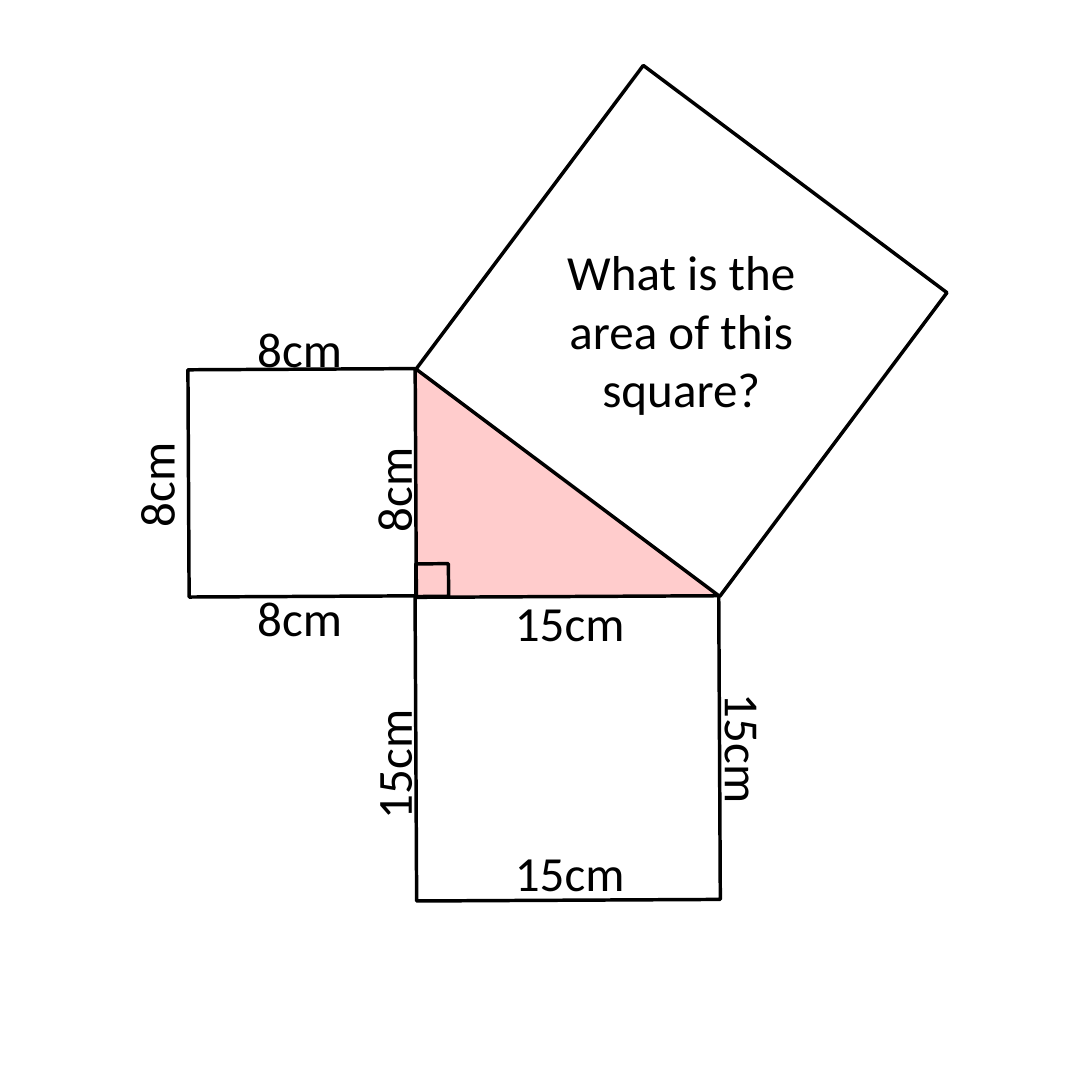
from math import atan2, degrees, hypot

from pptx import Presentation
from pptx.dml.color import RGBColor
from pptx.enum import shapes, text
from pptx.util import Cm, Pt

COLOURS = {"ink": "000000", "triangle": "FFCCCC"}
FONT, TEXT_SIZE = "Calibri", 14
SLIDE_SIDE = 11

# Triangle: right angle at bottom left, lengths in cm on the slide
CORNER_X, CORNER_Y = 4.19, 6.01
UPRIGHT, BASE = 2.29, 3.06
MARK = 0.33
TILT = -0.3

QUESTION = "What is the area of this square?"
QUESTION_SIZE = (3.15, 2.06)

# Side lengths: text, centre x, centre y, rotation
LABELS = [
    ("8cm", 3.02, 3.51, 0),
    ("8cm", 3.02, 6.22, 0),
    ("8cm", 1.57, 4.88, 270),
    ("8cm", 3.96, 4.93, 270),
    ("15cm", 3.96, 7.7, 270),
    ("15cm", 7.49, 7.54, 90),
    ("15cm", 5.74, 8.79, 0),
    ("15cm", 5.74, 6.27, 0),
]
LABEL_WIDTHS = {"8cm": 1.37, "15cm": 1.63}
LABEL_HEIGHT = 0.86


def colour(name):
    return RGBColor.from_string(COLOURS[name])


def box(centre_x, centre_y, width, height):
    return (Cm(centre_x - width / 2), Cm(centre_y - height / 2),
            Cm(width), Cm(height))


def add_square(slide, centre_x, centre_y, side, rotation):
    square = slide.shapes.add_shape(
        shapes.MSO_SHAPE.RECTANGLE, *box(centre_x, centre_y, side, side))
    square.rotation = rotation
    square.shadow.inherit = False
    square.fill.background()
    square.line.color.rgb = colour("ink")
    square.line.width = Pt(1)


def add_words(slide, words, centre_x, centre_y, width, height, rotation, wrap):
    holder = slide.shapes.add_textbox(*box(centre_x, centre_y, width, height))
    holder.rotation = rotation
    frame = holder.text_frame
    frame.word_wrap = wrap
    frame.auto_size = text.MSO_AUTO_SIZE.SHAPE_TO_FIT_TEXT
    frame.text = words
    line = frame.paragraphs[0]
    line.alignment = text.PP_ALIGN.CENTER
    font = line.runs[0].font
    font.name, font.size = FONT, Pt(TEXT_SIZE)
    font.color.rgb = colour("ink")


def main():
    deck = Presentation()
    deck.slide_width = deck.slide_height = Cm(SLIDE_SIDE)
    slide = deck.slides.add_slide(deck.slide_layouts[6])

    # Shaded right-angled triangle
    triangle = slide.shapes.add_shape(
        shapes.MSO_SHAPE.RIGHT_TRIANGLE,
        *box(CORNER_X + BASE / 2, CORNER_Y - UPRIGHT / 2, BASE, UPRIGHT))
    triangle.shadow.inherit = False
    triangle.fill.solid()
    triangle.fill.fore_color.rgb = colour("triangle")
    triangle.line.fill.background()

    # Squares on the three sides, and the right-angle mark
    slope_x = CORNER_X + (BASE + UPRIGHT) / 2
    slope_y = CORNER_Y - (BASE + UPRIGHT) / 2
    squares = [
        (CORNER_X - UPRIGHT / 2, CORNER_Y - UPRIGHT / 2, UPRIGHT, TILT),
        (slope_x, slope_y, hypot(BASE, UPRIGHT),
         degrees(atan2(UPRIGHT, BASE))),
        (CORNER_X + BASE / 2, CORNER_Y + BASE / 2, BASE, TILT),
        (CORNER_X + MARK / 2, CORNER_Y - MARK / 2, MARK, TILT),
    ]
    for square in squares:
        add_square(slide, *square)

    # Question and side lengths
    add_words(slide, QUESTION, slope_x, slope_y, *QUESTION_SIZE, 0, True)
    for length, x, y, rotation in LABELS:
        add_words(slide, length, x, y, LABEL_WIDTHS[length], LABEL_HEIGHT,
                  rotation, False)

    deck.save("out.pptx")


if __name__ == "__main__":
    main()
